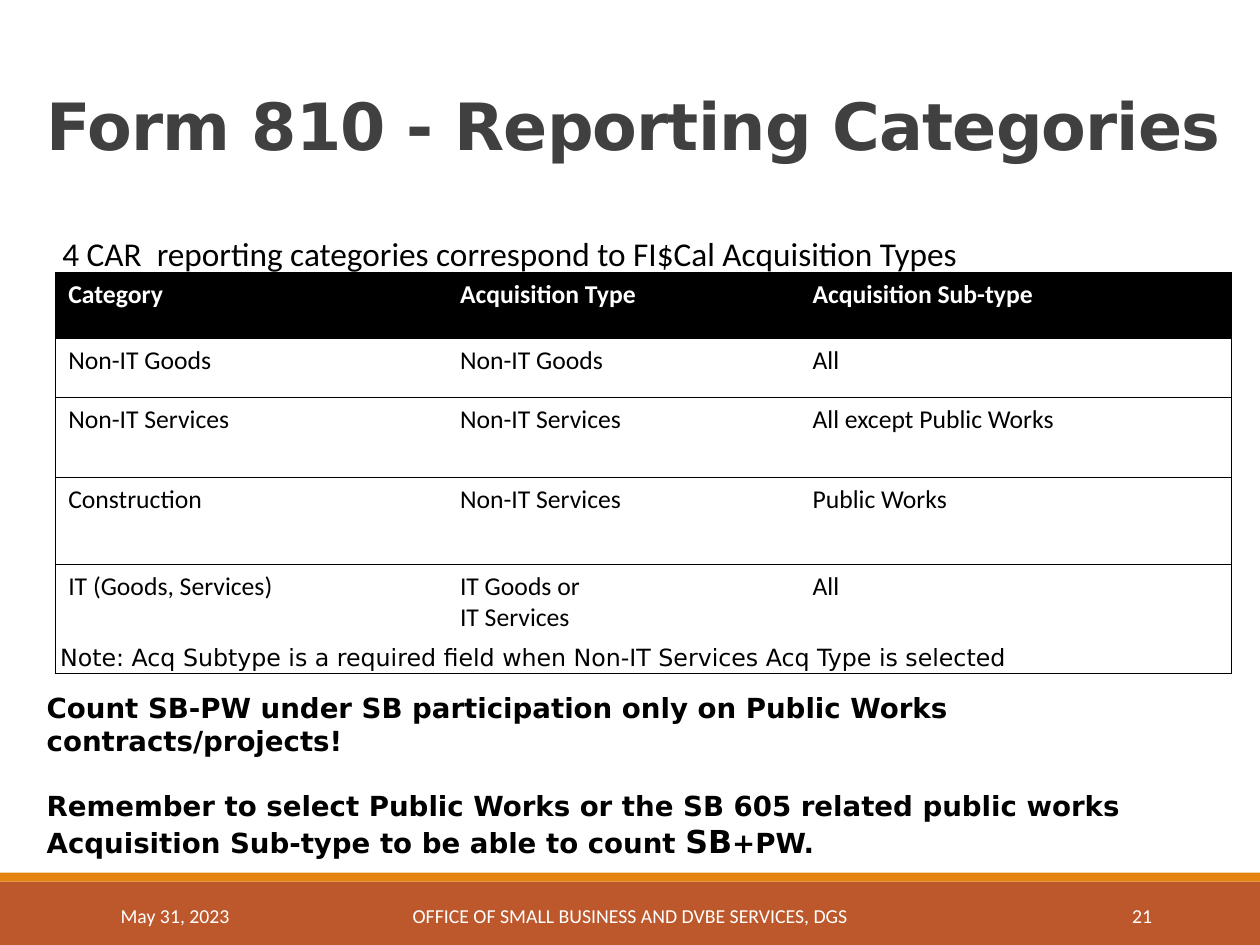
from lxml.etree import SubElement
from pptx import Presentation
from pptx.dml.color import RGBColor
from pptx.enum.shapes import MSO_SHAPE
from pptx.enum.text import MSO_ANCHOR as ANCHOR, MSO_AUTO_SIZE as AUTO_SIZE, PP_ALIGN as ALIGN
from pptx.oxml.ns import qn
from pptx.util import Cm, Pt

COLORS = {
    "rust": "BD582C",
    "orange": "E48312",
    "title": "404040",
    "black": "000000",
    "white": "FFFFFF",
}
BODY_FONT = "Calibri"
NOTE_FONT = "DejaVu Sans"

WIDTH, HEIGHT = 45.03, 33.78
COLUMN_WIDTHS = [14, 12.6, 15.42]
ROW_HEIGHTS = [2.34, 2.13, 2.84, 3.12, 3.89]
CATEGORIES = [
    ["Category", "Acquisition Type", "Acquisition Sub-type"],
    ["Non-IT Goods", "Non-IT Goods", "All"],
    ["Non-IT Services", "Non-IT Services", "All except Public Works"],
    ["Construction", "Non-IT Services", "Public Works"],
    ["IT (Goods, Services)", "IT Goods or\nIT Services", "All"],
]
FOOTER = [
    ("May 31, 2023", 4.06, 9.14, ALIGN.LEFT),
    ("OFFICE OF SMALL BUSINESS AND DVBE SERVICES, DGS", 13.61, 17.83, ALIGN.CENTER),
    ("21", 36.58, 4.85, ALIGN.RIGHT),
]


def rgb(color):
    return RGBColor.from_string(COLORS[color])


def style_font(font, size, color="black", name=BODY_FONT, bold=False):
    font.size = Pt(size)
    font.name = name
    font.bold = bold
    font.color.rgb = rgb(color)


def fill_text(frame, text, size, align=ALIGN.LEFT, **style):
    frame.text = text
    frame.word_wrap = True
    for paragraph in frame.paragraphs:
        paragraph.alignment = align
        style_font(paragraph.font, size, **style)


def add_block(slide, left, top, width, height, color):
    block = slide.shapes.add_shape(
        MSO_SHAPE.RECTANGLE, Cm(left), Cm(top), Cm(width), Cm(height))
    block.shadow.inherit = False
    block.fill.solid()
    block.fill.fore_color.rgb = rgb(color)
    block.line.fill.background()
    return block


def add_text(slide, left, top, width, height, text, size, anchor=ANCHOR.TOP, **style):
    frame = slide.shapes.add_textbox(
        Cm(left), Cm(top), Cm(width), Cm(height)).text_frame
    frame.vertical_anchor = anchor
    fill_text(frame, text, size, **style)
    return frame


def set_title(slide):
    title = slide.shapes.title
    title.left, title.top, title.width, title.height = Cm(1.42), Cm(2.29), Cm(43.1), Cm(3.71)
    frame = title.text_frame
    frame.auto_size = AUTO_SIZE.NONE
    frame.vertical_anchor = ANCHOR.BOTTOM
    fill_text(frame, "Form 810 - Reporting Categories", 66,
              color="title", name=NOTE_FONT, bold=True)
    heading = frame.paragraphs[0]
    heading.line_spacing = 0.85
    heading.runs[0].font._element.set("spc", "-90")


def set_borders(cell, visible_sides):
    # Borders come before the fill in the cell properties
    properties = cell._tc.get_or_add_tcPr()
    for position, side in enumerate(("lnL", "lnR", "lnT", "lnB")):
        border = SubElement(properties, qn(f"a:{side}"), w=str(Pt(1)))
        if side in visible_sides:
            solid = SubElement(border, qn("a:solidFill"))
            SubElement(solid, qn("a:srgbClr"), val=COLORS["black"])
        else:
            SubElement(border, qn("a:noFill"))
        properties.insert(position, border)


def add_categories(slide):
    table = slide.shapes.add_table(
        len(ROW_HEIGHTS), len(COLUMN_WIDTHS), Cm(1.98), Cm(9.75),
        Cm(sum(COLUMN_WIDTHS)), Cm(sum(ROW_HEIGHTS))).table
    for column, width in zip(table.columns, COLUMN_WIDTHS):
        column.width = Cm(width)
    for row, height in zip(table.rows, ROW_HEIGHTS):
        row.height = Cm(height)

    last_column = len(COLUMN_WIDTHS) - 1
    for row_index, entries in enumerate(CATEGORIES):
        is_header = row_index == 0
        for column_index, entry in enumerate(entries):
            cell = table.cell(row_index, column_index)
            cell.margin_left = cell.margin_right = Cm(0.46)
            cell.margin_top = cell.margin_bottom = Cm(0.23)
            fill_text(cell.text_frame, entry, 26, bold=is_header,
                      color="white" if is_header else "black")
            cell.fill.solid()
            cell.fill.fore_color.rgb = rgb("black" if is_header else "white")
            sides = {"lnT", "lnB"}
            if column_index == 0:
                sides.add("lnL")
            if column_index == last_column:
                sides.add("lnR")
            set_borders(cell, sides)


def add_reminders(slide):
    frame = add_text(
        slide, 1.42, 24.56, 42.24, 6.4,
        "Count SB-PW under SB participation only on Public Works contracts/projects!\n"
        "Remember to select Public Works or the SB 605 related public works\n"
        "Acquisition Sub-type to be able to count ",
        28, name=NOTE_FONT, bold=True)
    remember, closing = frame.paragraphs[1:]
    remember.space_before = Pt(32.6)
    for text, size in (("SB", 32), ("+PW.", 28)):
        run = closing.add_run()
        run.text = text
        run.font.size = Pt(size)


def add_footer(slide):
    for text, left, width, align in FOOTER:
        add_text(slide, left, 31.83, width, 1.8, text, 20,
                 anchor=ANCHOR.MIDDLE, align=align, color="white")


def main():
    deck = Presentation()
    deck.slide_width, deck.slide_height = Cm(WIDTH), Cm(HEIGHT)
    slide = deck.slides.add_slide(deck.slide_layouts[5])

    # Footer bands
    add_block(slide, 0, 31.52, WIDTH, 2.26, "rust")
    add_block(slide, 0, 31.19, WIDTH, 0.33, "orange")

    # Title and introduction
    set_title(slide)
    intro = add_block(slide, 1.98, 8.2, 42.01, 12.62, "white").text_frame
    intro.vertical_anchor = ANCHOR.TOP
    fill_text(intro, "4 CAR  reporting categories correspond to FI$Cal Acquisition Types", 33.7)

    # Categories, note and reminders
    add_categories(slide)
    add_text(slide, 1.9, 22.86, 42.04, 1.27,
             "Note: Acq Subtype is a required field when Non-IT Services Acq Type is selected",
             24, name=NOTE_FONT)
    add_reminders(slide)

    add_footer(slide)
    deck.save("out.pptx")


if __name__ == "__main__":
    main()
